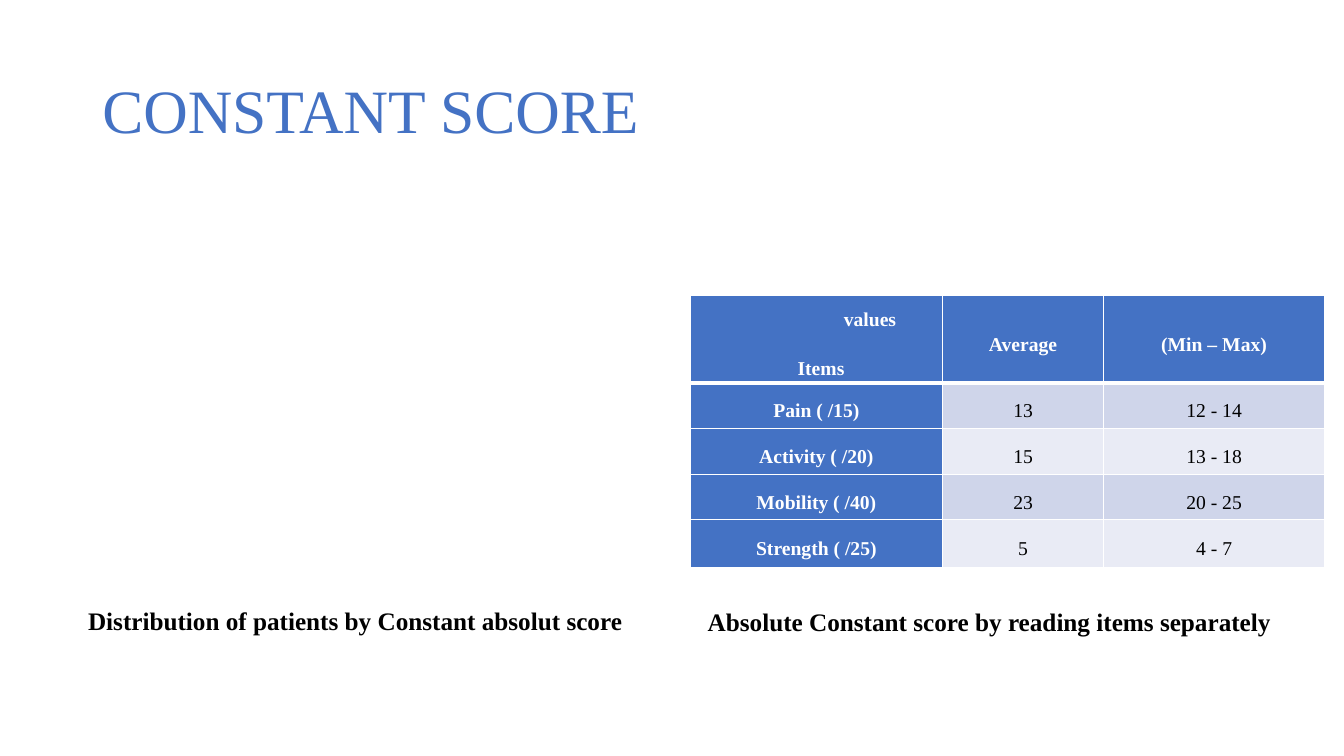
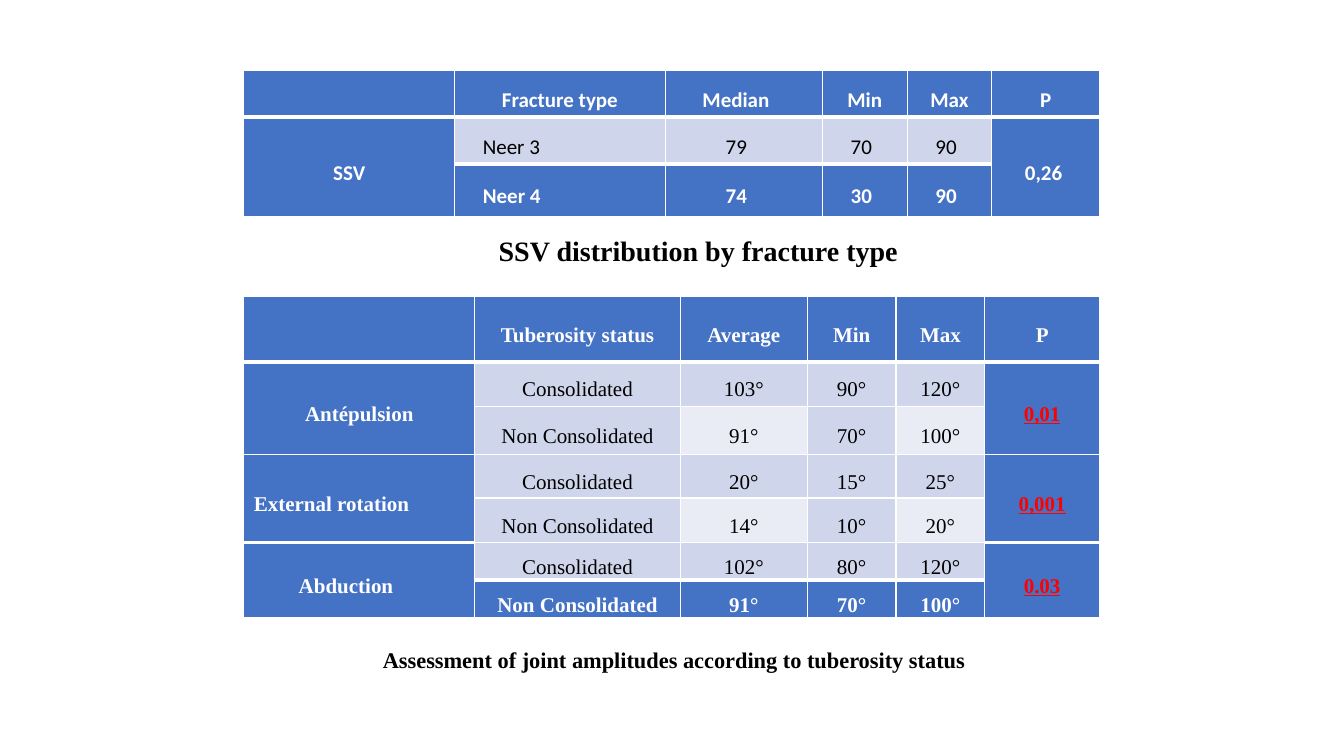
"""Build two slides of shoulder score tables with captions."""
from dataclasses import dataclass

from lxml import etree
from pptx import Presentation
from pptx.dml.color import RGBColor
from pptx.enum.text import MSO_ANCHOR, PP_ALIGN
from pptx.oxml.ns import qn
from pptx.util import Pt

BLUE = RGBColor(0x44, 0x72, 0xC4)
BAND = RGBColor(0xCF, 0xD5, 0xEA)
PALE = RGBColor(0xE9, 0xEB, 0xF5)
WHITE = RGBColor(0xFF, 0xFF, 0xFF)
BLACK = RGBColor(0x00, 0x00, 0x00)
RED = RGBColor(0xFF, 0x00, 0x00)

CENTER = PP_ALIGN.CENTER
LEFT = PP_ALIGN.LEFT
TOP = MSO_ANCHOR.TOP
MIDDLE = MSO_ANCHOR.MIDDLE

SERIF = "Times New Roman"
SANS = "Calibri"
THIN = 1
THICK = 3
BLANK_LAYOUT = 6


@dataclass(frozen=True)
class Cell:
    """Content and look of one table cell; each line is (text, indent)."""
    lines: tuple = ()
    fill: RGBColor = BLUE
    color: RGBColor = WHITE
    bold: bool = True
    underline: bool = False
    top: int = THIN
    bottom: int = THIN
    span: int = 1


@dataclass(frozen=True)
class TableStyle:
    """Text settings shared by all cells of a table."""
    font: str
    size: float
    inset: float
    space_after: float = 0


def strong(text="", indent=None, **options):
    """Return a blue cell with bold white text."""
    return Cell(((text, indent),) if text else (), **options)


def header(text="", indent=None):
    """Return a cell of the heading row."""
    return strong(text, indent, bottom=THICK)


def plain(text, indent=None, fill=BAND):
    """Return a banded cell with black text."""
    return Cell(((text, indent),), fill, BLACK, False)


def significant(text, top=THIN):
    """Return a merged cell for a significant P value."""
    return strong(text, color=RED, underline=True, span=2, top=top)


def add_run(paragraph, text, font, size, color, bold=False, underline=False):
    """Add one formatted run to a paragraph."""
    run = paragraph.add_run()
    run.text = text
    run.font.name = font
    run.font.size = Pt(size)
    run.font.color.rgb = color
    run.font.bold = bold
    run.font.underline = underline


def add_text(slide, text, left, top, width, height, size, color=BLACK,
             bold=True, align=CENTER, anchor=MIDDLE, line_spacing=1.0, gap=0):
    """Add a one-paragraph text box."""
    box = slide.shapes.add_textbox(Pt(left), Pt(top), Pt(width), Pt(height))
    frame = box.text_frame
    frame.word_wrap = True
    frame.vertical_anchor = anchor
    paragraph = frame.paragraphs[0]
    paragraph.alignment = align
    paragraph.line_spacing = line_spacing
    paragraph.space_before = paragraph.space_after = Pt(gap)
    add_run(paragraph, text, SERIF, size, color, bold)


def set_borders(table_cell, top, bottom):
    """Draw white borders around a table cell."""
    properties = table_cell._tc.get_or_add_tcPr()
    widths = {"a:lnL": THIN, "a:lnR": THIN, "a:lnT": top, "a:lnB": bottom}
    for tag, width in widths.items():
        line = etree.SubElement(properties, qn(tag), w=str(Pt(width)))
        fill = etree.SubElement(line, qn("a:solidFill"))
        etree.SubElement(fill, qn("a:srgbClr"), val=str(WHITE))


def fill_cell(table_cell, cell, style):
    """Apply borders, fill and text to a table cell."""
    set_borders(table_cell, cell.top, cell.bottom)
    table_cell.fill.solid()
    table_cell.fill.fore_color.rgb = cell.fill
    table_cell.vertical_anchor = MIDDLE
    table_cell.margin_left = table_cell.margin_right = Pt(style.inset)
    table_cell.margin_top = table_cell.margin_bottom = Pt(0)
    frame = table_cell.text_frame
    for index, (text, indent) in enumerate(cell.lines):
        paragraph = frame.add_paragraph() if index else frame.paragraphs[0]
        paragraph.alignment = CENTER if indent is None else LEFT
        if indent:
            paragraph._p.get_or_add_pPr().set("marL", str(Pt(indent)))
        paragraph.line_spacing = 1.5
        paragraph.space_before = Pt(6)
        paragraph.space_after = Pt(style.space_after)
        add_run(paragraph, text, style.font, style.size, cell.color,
                cell.bold, cell.underline)


def add_table(slide, left, top, widths, heights, rows, style):
    """Add a table; None marks a position covered by the cell above."""
    frame = slide.shapes.add_table(len(rows), len(widths), Pt(left), Pt(top),
                                   Pt(sum(widths)), Pt(sum(heights)))
    table = frame.table
    for column, width in zip(table.columns, widths):
        column.width = Pt(width)
    for row, height in zip(table.rows, heights):
        row.height = Pt(height)
    for row_index, row in enumerate(rows):
        for column_index, cell in enumerate(row):
            table_cell = table.cell(row_index, column_index)
            fill_cell(table_cell, cell or Cell(), style)
            if cell and cell.span > 1:
                last_row = row_index + cell.span - 1
                table_cell.merge(table.cell(last_row, column_index))


def add_constant_slide(presentation):
    """Add the slide with the Constant score by item."""
    slide = presentation.slides.add_slide(presentation.slide_layouts[BLANK_LAYOUT])
    add_text(slide, "CONSTANT SCORE", 66, 28.8, 828, 104.4, 44, BLUE, False,
             LEFT, line_spacing=0.9)
    corner = Cell((("values", 103), ("Items", 70)), bottom=THICK)
    rows = [[corner, header("Average"), header("(Min – Max)")]]
    scores = [
        ("Pain ( /15)", "13", "12 - 14"),
        ("Activity ( /20)", "15", "13 - 18"),
        ("Mobility ( /40)", "23", "20 - 25"),
        ("Strength ( /25)", "5", "4 - 7"),
    ]
    for index, (item, average, extent) in enumerate(scores):
        fill = PALE if index % 2 else BAND
        rows.append([strong(item), plain(average, fill=fill),
                     plain(extent, fill=fill)])
    add_table(slide, 493.2, 211, (180, 115.2, 157.7),
              (61.9, 32.4, 33.1, 32.4, 33.8), rows,
              TableStyle(SERIF, 14, 6.5, 6))
    captions = [
        ("Distribution of patients by Constant absolut score", 13.7, 418.3),
        ("Absolute Constant score by reading items separately", 466.6, 419),
    ]
    for text, left, top in captions:
        add_text(slide, text, left, top, 480.2, 40, 18, anchor=TOP,
                 line_spacing=1.5, gap=6)


def ssv_rows():
    """Return the rows of the SSV table."""
    indents = (13, 36, 13, 13)
    neer_3 = ("Neer 3", "79", "70", "90")
    neer_4 = ("Neer 4", "74", "30", "90")
    return [
        [header(), header("Fracture type"), header("Median", 19.4),
         header("Min"), header("Max"), header("P")],
        [strong("SSV", span=2, top=THICK), *map(plain, neer_3, indents),
         strong("0,26", 16.5, span=2, top=THICK)],
        [None, *(strong(text, indent, top=THICK)
                 for text, indent in zip(neer_4, indents)), None],
    ]


def amplitude_rows():
    """Return the rows of the joint amplitude table."""
    movements = [
        ("Antépulsion", None, "0,01", ("103°", "90°", "120°"), ("91°", "70°", "100°")),
        ("External rotation", 0, "0,001", ("20°", "15°", "25°"), ("14°", "10°", "20°")),
        ("Abduction", 32, "0.03", ("102°", "80°", "120°"), ("91°", "70°", "100°")),
    ]
    titles = ("", "Tuberosity status", "Average", "Min", "Max", "P")
    rows = [[header(title) for title in titles]]
    for movement, indent, p_value, consolidated, other in movements:
        is_last = movement == movements[-1][0]
        top = THICK if is_last else THIN
        rows.append([strong(movement, indent, span=2, top=top),
                     *map(plain, ("Consolidated", *consolidated)),
                     significant(p_value, top)])
        values = ("Non Consolidated", *other)
        if is_last:
            cells = [strong(value, top=THICK) for value in values]
        else:
            cells = [plain(value, fill=fill)
                     for value, fill in zip(values, (BAND, PALE) * 2)]
        rows.append([None, *cells, None])
    return rows


def add_comparison_slide(presentation):
    """Add the slide comparing fracture types and tuberosity status."""
    slide = presentation.slides.add_slide(presentation.slide_layouts[BLANK_LAYOUT])
    left = 174.2
    add_table(slide, left, 50.4, (150.5, 150.5, 112.3, 60.5, 60.5, 77),
              (33.1, 33.8, 37.4), ssv_rows(), TableStyle(SANS, 15, 7.2))
    add_text(slide, "SSV distribution by fracture type",
             296.6, 162.7, 404.6, 31.7, 20)
    add_table(slide, left, 211.7, (164.9, 146.9, 90.7, 63.4, 63.4, 82),
              (46.8, 31.7, 34.6, 31, 31.7, 25.2, 25.2), amplitude_rows(),
              TableStyle(SERIF, 15, 7.2))
    add_text(slide, "Assessment of joint amplitudes according to tuberosity status",
             266.4, 457.9, 488.9, 26.6, 16, align=LEFT)


def main():
    """Build and save the presentation."""
    presentation = Presentation()
    presentation.slide_width = Pt(960)
    presentation.slide_height = Pt(540)
    add_constant_slide(presentation)
    add_comparison_slide(presentation)
    presentation.save("out.pptx")


if __name__ == "__main__":
    main()
